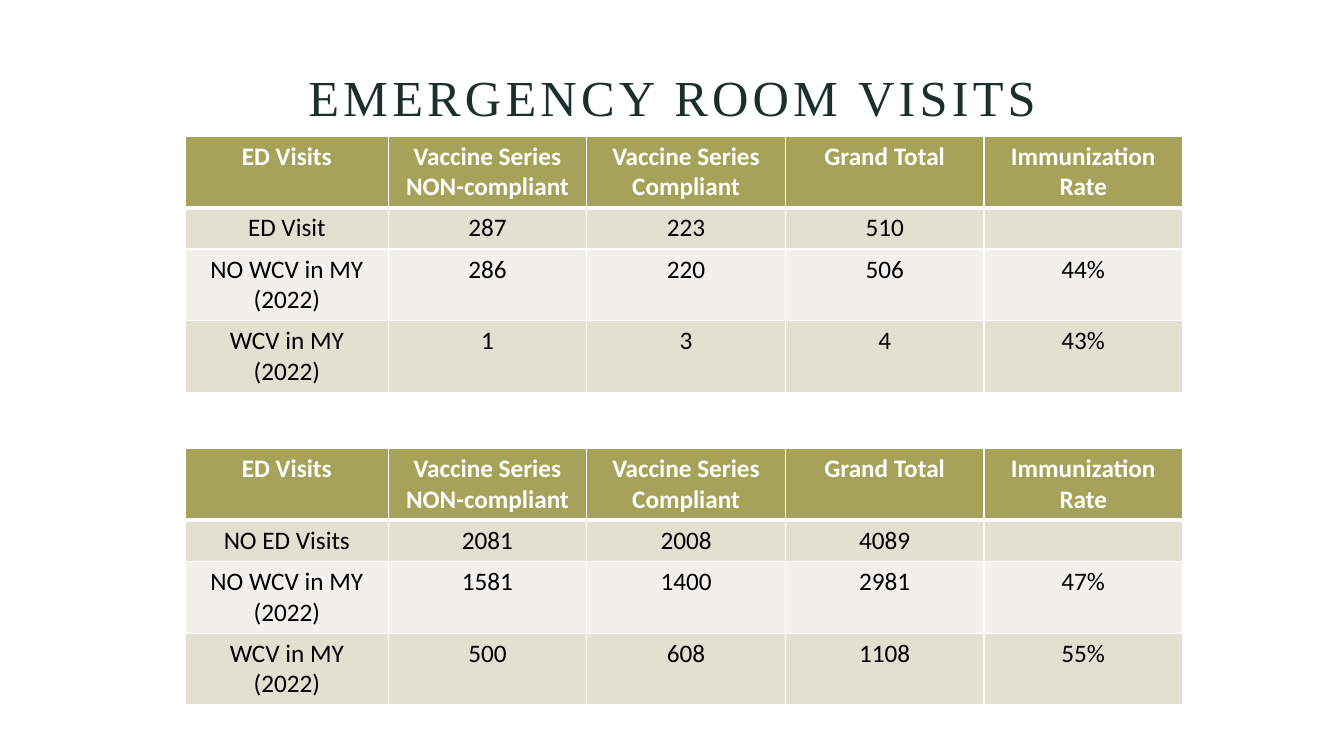
"""Build the emergency room visits slide with its two immunization tables."""
from dataclasses import dataclass

from lxml import etree
from pptx import Presentation
from pptx.dml.color import RGBColor
from pptx.enum.text import MSO_ANCHOR, MSO_AUTO_SIZE, PP_ALIGN
from pptx.oxml.ns import qn
from pptx.util import Inches, Pt

CENTER = PP_ALIGN.CENTER
BOTTOM = MSO_ANCHOR.BOTTOM
NO_AUTOFIT = MSO_AUTO_SIZE.NONE
TITLE_ONLY_LAYOUT = 5


@dataclass(frozen=True)
class Theme:
    title_font: str = "Times New Roman"
    table_font: str = "Calibri"
    title_size: int = 36
    table_size: int = 18
    title_color: str = "1B2F2C"
    header_fill: str = "A7A259"
    band_fills: tuple = ("E1E0D1", "F1F0EA")
    header_text: str = "FFFFFF"
    body_text: str = "000000"
    border_color: str = "FFFFFF"
    thin_border: int = 1
    thick_border: int = 3


def write_text(frame, text, *, font, size, color, bold=False, spacing=None):
    para = frame.paragraphs[0]
    para.alignment = CENTER
    para.font.size = Pt(size)
    if not text:
        return para
    span = para.add_run()
    span.text = text
    span.font.name = font
    span.font.size = Pt(size)
    span.font.bold = bold
    span.font.color.rgb = RGBColor.from_string(color)
    if spacing:
        span.font._element.set("spc", str(spacing * 100))
    return para


class SlideBuilder:
    def __init__(self, page, theme):
        self.page = page
        self.theme = theme

    def title(self, text, left, top, width, height):
        box = self.page.shapes.title
        box.left, box.top = Inches(left), Inches(top)
        box.width, box.height = Inches(width), Inches(height)
        frame = box.text_frame
        frame.auto_size = NO_AUTOFIT
        frame.vertical_anchor = BOTTOM
        para = write_text(frame, text, font=self.theme.title_font,
                          size=self.theme.title_size,
                          color=self.theme.title_color, spacing=3)
        para.line_spacing = 0.9

    def border(self, cell, side, width):
        properties = cell._tc.get_or_add_tcPr()
        line = etree.SubElement(properties, qn(f"a:ln{side}"), w=str(Pt(width)))
        fill = etree.SubElement(line, qn("a:solidFill"))
        etree.SubElement(fill, qn("a:srgbClr"), val=self.theme.border_color)

    def cell(self, cell, text, row_index):
        theme = self.theme
        is_header = row_index == 0
        thick_side = {0: "B", 1: "T"}.get(row_index)
        for side in "LRTB":
            self.border(cell, side, theme.thick_border if side == thick_side
                        else theme.thin_border)
        fill = theme.header_fill if is_header else theme.band_fills[(row_index - 1) % 2]
        cell.fill.solid()
        cell.fill.fore_color.rgb = RGBColor.from_string(fill)
        write_text(cell.text_frame, text, font=theme.table_font,
                   size=theme.table_size, bold=is_header,
                   color=theme.header_text if is_header else theme.body_text)

    def table(self, rows, left, top, height, column_widths, row_height):
        graphic = self.page.shapes.add_table(
            len(rows), len(column_widths), Inches(left), Inches(top),
            Inches(sum(column_widths)), Inches(height))
        table = graphic.table
        for column, width in zip(table.columns, column_widths):
            column.width = Inches(width)
        for row_index, values in enumerate(rows):
            table.rows[row_index].height = Inches(row_height)
            for column_index, text in enumerate(values):
                self.cell(table.cell(row_index, column_index), text, row_index)
        graphic.height = Inches(height)


HEADER = ("ED Visits", "Vaccine Series NON-compliant", "Vaccine Series Compliant",
          "Grand Total", "Immunization Rate")
WITHOUT_WELL_CARE = "NO WCV in MY (2022)"
WITH_WELL_CARE = "WCV in MY (2022)"
VISIT_TABLES = (
    (1.35, (("ED Visit", "287", "223", "510", ""),
            (WITHOUT_WELL_CARE, "286", "220", "506", "44%"),
            (WITH_WELL_CARE, "1", "3", "4", "43%"))),
    (4.45, (("NO ED Visits", "2081", "2008", "4089", ""),
            (WITHOUT_WELL_CARE, "1581", "1400", "2981", "47%"),
            (WITH_WELL_CARE, "500", "608", "1108", "55%"))),
)


def main():
    deck = Presentation()
    deck.slide_width, deck.slide_height = Inches(13.33), Inches(7.5)
    page = deck.slides.add_slide(deck.slide_layouts[TITLE_ONLY_LAYOUT])
    builder = SlideBuilder(page, Theme())
    builder.title("EMERGENCY ROOM VISITS", 1.47, 0.25, 10.4, 1.06)
    for top, body in VISIT_TABLES:
        builder.table((HEADER, *body), left=1.84, top=top, height=2.81,
                      column_widths=[2.01] + [1.97] * 4, row_height=0.41)
    deck.save("out.pptx")


if __name__ == "__main__":
    main()
